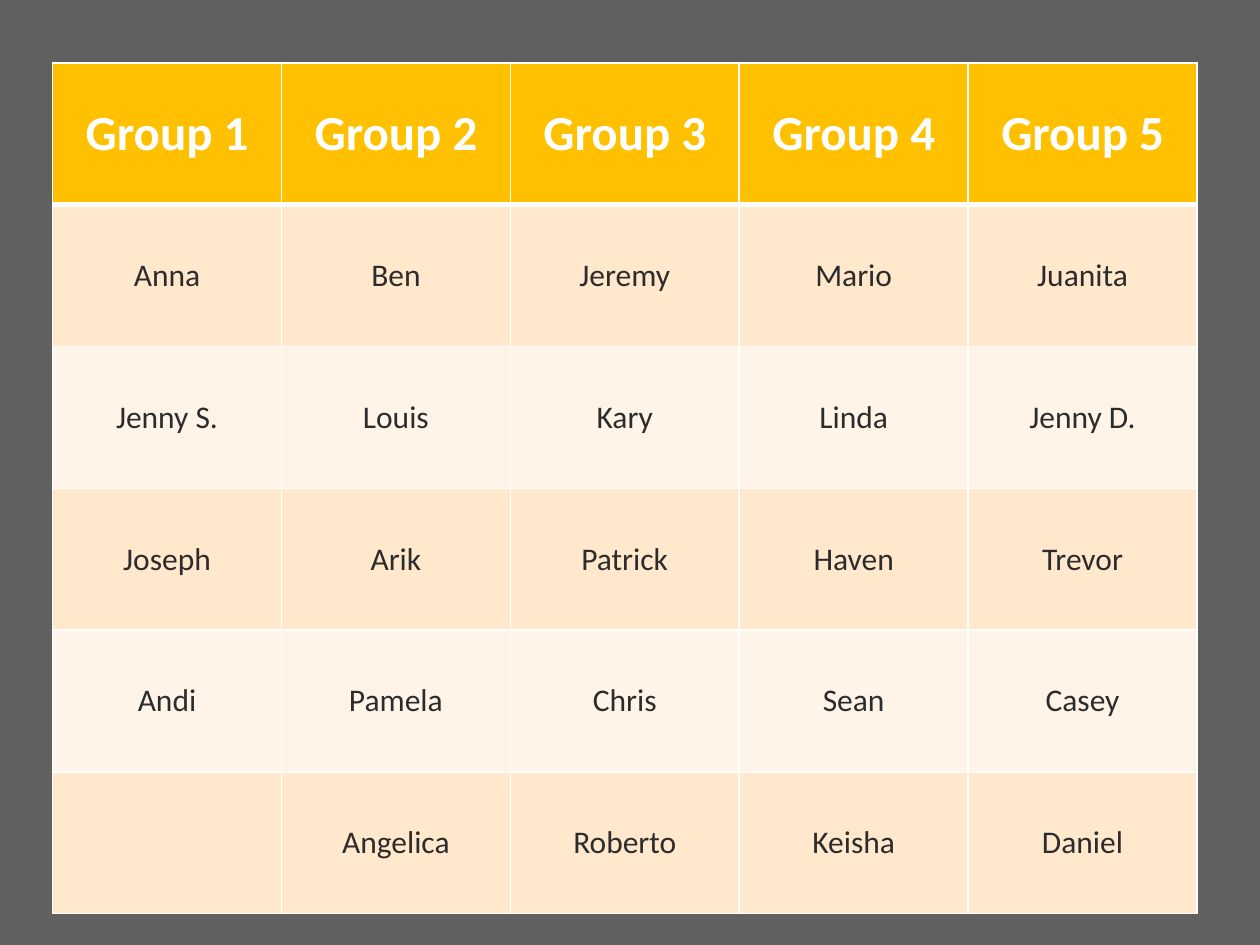
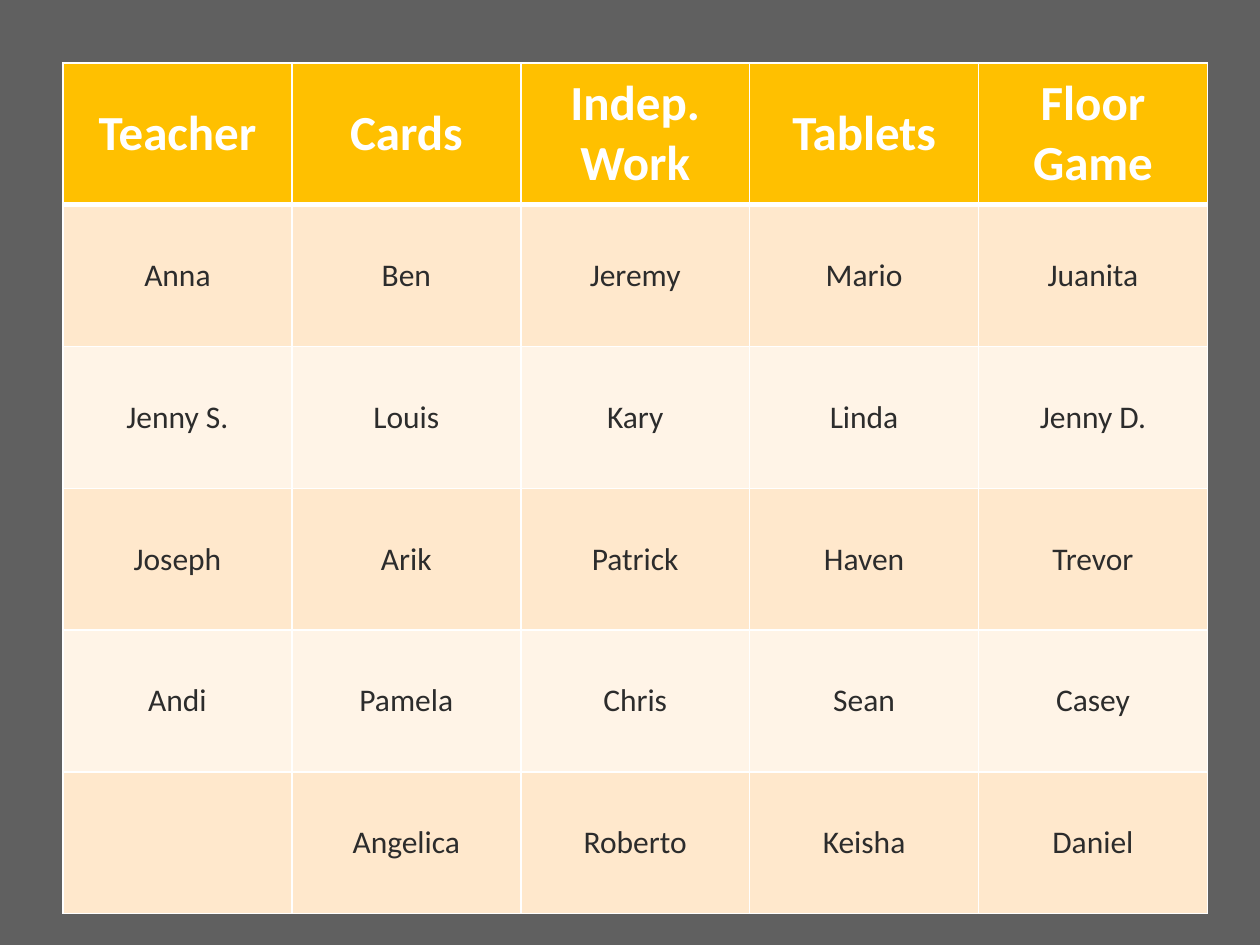
"""Build two slides of classroom group tables."""
from dataclasses import dataclass

from lxml import etree
from pptx import Presentation
from pptx.dml.color import RGBColor
from pptx.enum.text import MSO_ANCHOR, PP_ALIGN
from pptx.oxml.ns import qn
from pptx.util import Cm, Pt

CENTER = PP_ALIGN.CENTER
MIDDLE = MSO_ANCHOR.MIDDLE


@dataclass(frozen=True)
class Theme:
    font: str = "Calibri"
    background: str = "606060"
    header_fill: str = "FFC000"
    header_text: str = "FFFFFF"
    band_fills: tuple = ("FFE8CC", "FFF4E7")
    body_text: str = "2C2C2C"
    border: str = "FFFFFF"
    header_size: int = 28
    body_size: int = 18
    thin: int = 1
    thick: int = 3


STUDENTS = [
    ["Anna", "Ben", "Jeremy", "Mario", "Juanita"],
    ["Jenny S.", "Louis", "Kary", "Linda", "Jenny D."],
    ["Joseph", "Arik", "Patrick", "Haven", "Trevor"],
    ["Andi", "Pamela", "Chris", "Sean", "Casey"],
    ["", "Angelica", "Roberto", "Keisha", "Daniel"],
]
GROUPS = [f"Group {number}" for number in range(1, 6)]
STATIONS = ["Teacher", "Cards", "Indep. Work", "Tablets", "Floor Game"]


def write_text(frame, text, *, font, size, color, bold=False, align=CENTER):
    paragraph = frame.paragraphs[0]
    paragraph.alignment = align
    if not text:
        paragraph.font.size = Pt(size)
        return
    run = paragraph.add_run()
    run.text = text
    run.font.name = font
    run.font.size = Pt(size)
    run.font.bold = bold
    run.font.color.rgb = RGBColor.from_string(color)


class Deck:
    def __init__(self, theme):
        self.theme = theme
        self.presentation = Presentation()
        self.presentation.slide_width = Cm(25.4)
        self.presentation.slide_height = Cm(19.05)
        backdrop = self.presentation.slide_master.background.fill
        backdrop.solid()
        backdrop.fore_color.rgb = RGBColor.from_string(theme.background)
        self.slide = None

    def add_slide(self):
        blank = self.presentation.slide_layouts[6]
        self.slide = self.presentation.slides.add_slide(blank)

    def add_borders(self, cell, top, bottom):
        properties = cell._tc.get_or_add_tcPr()
        widths = {"L": self.theme.thin, "R": self.theme.thin, "T": top, "B": bottom}
        for side, width in widths.items():
            line = etree.SubElement(properties, qn(f"a:ln{side}"), w=str(Pt(width)))
            fill = etree.SubElement(line, qn("a:solidFill"))
            etree.SubElement(fill, qn("a:srgbClr"), val=self.theme.border)

    def add_cell(self, cell, text, row):
        theme = self.theme
        is_header = row == 0
        self.add_borders(
            cell,
            top=theme.thick if row == 1 else theme.thin,
            bottom=theme.thick if is_header else theme.thin,
        )
        fill = theme.header_fill if is_header else theme.band_fills[(row - 1) % 2]
        cell.fill.solid()
        cell.fill.fore_color.rgb = RGBColor.from_string(fill)
        cell.vertical_anchor = MIDDLE
        write_text(
            cell.text_frame,
            text,
            font=theme.font,
            size=theme.header_size if is_header else theme.body_size,
            color=theme.header_text if is_header else theme.body_text,
            bold=is_header,
        )

    def add_roster(self, headings, left):
        rows = [headings, *STUDENTS]
        roster = self.slide.shapes.add_table(
            len(rows), len(headings), left, Cm(1.27), Cm(23.07), Cm(17.15)
        ).table
        for row, names in enumerate(rows):
            for column, name in enumerate(names):
                self.add_cell(roster.cell(row, column), name, row)


def main():
    deck = Deck(Theme())
    for headings, left in ((GROUPS, Cm(1.06)), (STATIONS, Cm(1.27))):
        deck.add_slide()
        deck.add_roster(headings, left)
    deck.presentation.save("out.pptx")


if __name__ == "__main__":
    main()
